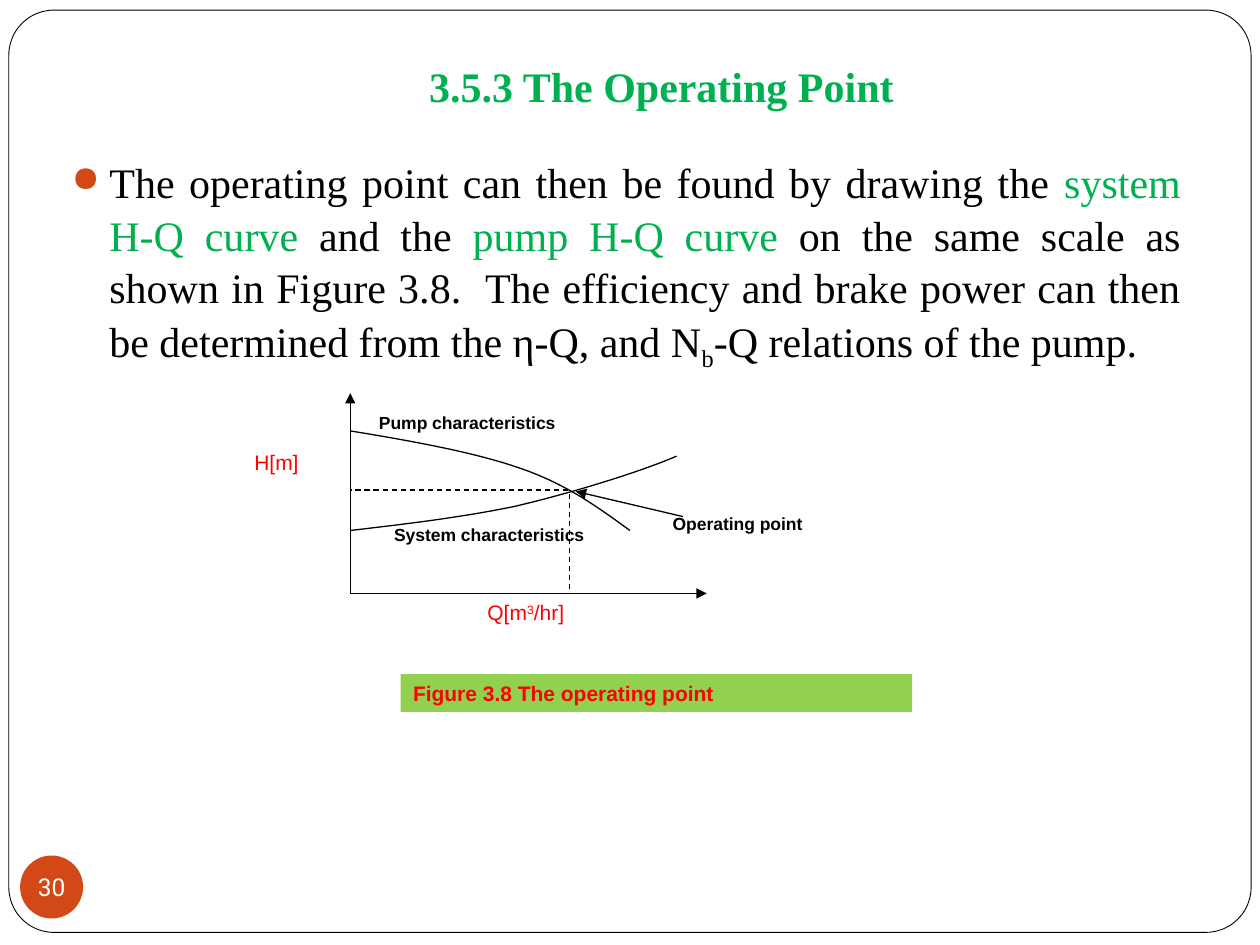
from lxml.etree import SubElement
from pptx import Presentation
from pptx.dml.color import RGBColor
from pptx.enum.dml import MSO_LINE
from pptx.enum.shapes import MSO_CONNECTOR, MSO_SHAPE
from pptx.enum.text import MSO_ANCHOR, PP_ALIGN
from pptx.oxml.ns import qn
from pptx.util import Inches, Pt

BLACK, WHITE, RED, GREEN, ORANGE = "000000", "FFFFFF", "FF0000", "00B050", "D34817"


def color(value):
    return RGBColor.from_string(value)


def write(shape, pieces, size, font="Arial", bold=False, align=PP_ALIGN.LEFT, anchor=MSO_ANCHOR.TOP):
    frame = shape.text_frame
    frame.word_wrap = True
    frame.vertical_anchor = anchor
    para = frame.paragraphs[0]
    para.alignment = align
    for text, ink, baseline in pieces:
        span = para.add_run()
        span.text = text
        span.font.size = Pt(size)
        span.font.name = font
        span.font.bold = bold
        span.font.color.rgb = color(ink)
        if baseline:
            span.font._element.set("baseline", str(baseline * 1000))
    return para


deck = Presentation()
deck.slide_width, deck.slide_height = Inches(10), Inches(7.5)
page = deck.slides.add_slide(deck.slide_layouts[6])
shapes = page.shapes

border = shapes.add_shape(MSO_SHAPE.ROUNDED_RECTANGLE, Inches(0.07), Inches(0.08), Inches(9.86), Inches(7.32))
border.adjustments[0] = 0.049
border.shadow.inherit = False
border.fill.solid()
border.fill.fore_color.rgb = color(WHITE)
border.line.color.rgb = color(BLACK)
border.line.width = Pt(0.5)

title = shapes.add_textbox(Inches(1), Inches(0.3), Inches(8.5), Inches(1.25))
title.text_frame.margin_top = Inches(0.18)
write(title, [("3.5.3 The Operating Point", GREEN, 0)], 24, "Times New Roman", True, PP_ALIGN.CENTER)

badge = shapes.add_shape(MSO_SHAPE.OVAL, Inches(0.16), Inches(6.79), Inches(0.5), Inches(0.5))
badge.shadow.inherit = False
badge.fill.solid()
badge.fill.fore_color.rgb = color(ORANGE)
badge.line.fill.background()
write(badge, [("30", WHITE, 0)], 14, "Roboto", False, PP_ALIGN.CENTER, MSO_ANCHOR.MIDDLE)
badge.text_frame.word_wrap = False
for side in ("left", "top", "right", "bottom"):
    setattr(badge.text_frame, f"margin_{side}", 0)

body = shapes.add_textbox(Inches(0.47), Inches(1.17), Inches(9), Inches(4.95))
para = write(body, [
    ("The operating point can then be found by drawing the ", BLACK, 0),
    ("system H-Q curve ", GREEN, 0),
    ("and the ", BLACK, 0),
    ("pump H-Q curve ", GREEN, 0),
    ("on the same scale as shown in Figure 3.8.  The efficiency and brake power can then "
     "be determined from the η-Q, and N", BLACK, 0),
    ("b", BLACK, -25),
    ("-Q relations of the pump. ", BLACK, 0),
], 24, "Times New Roman", align=PP_ALIGN.JUSTIFY)
para.space_before = Pt(5.8)
para.line_spacing = 1.05
settings = para._p.get_or_add_pPr()
settings.set("marL", str(Inches(0.3)))
settings.set("indent", str(Inches(-0.3)))
bullet_color = SubElement(settings, qn("a:buClr"))
SubElement(bullet_color, qn("a:srgbClr"), val=ORANGE)
SubElement(settings, qn("a:buSzPct"), val="85000")
SubElement(settings, qn("a:buChar"), char="●")

strokes = [
    (2.78, 4.71, 2.78, 3.12, "arrow"),
    (2.78, 4.71, 5.61, 4.71, "arrow"),
    (5.42, 4.1, 4.57, 3.9, "arrow"),
    (4.51, 3.89, 2.78, 3.89, "dash"),
    (4.52, 3.92, 4.52, 4.71, "dash"),
]
for x1, y1, x2, y2, style in strokes:
    stroke = shapes.add_connector(MSO_CONNECTOR.STRAIGHT, Inches(x1), Inches(y1), Inches(x2), Inches(y2))
    stroke.line.color.rgb = color(BLACK)
    stroke.line.width = Pt(0.75)
    if style == "dash":
        stroke.line.dash_style = MSO_LINE.DASH
    else:
        SubElement(stroke.line._get_or_add_ln(), qn("a:tailEnd"), type="triangle")
    SubElement(stroke._element.spPr, qn("a:effectLst"))

pump_curve = [(2.78, 3.42), (3.27, 3.5), (3.77, 3.59), (4.14, 3.72), (4.51, 3.85), (4.75, 4.03), (5, 4.21)]
system_curve = [(2.78, 4.21), (3.21, 4.16), (3.64, 4.11), (4.08, 4.02), (4.51, 3.92), (5.07, 3.75), (5.37, 3.62)]
STEPS = 16
for controls in (pump_curve, system_curve):
    points = []
    for first in (0, 3):
        for step in range(1, STEPS + 1):
            t = step / STEPS
            weights = ((1 - t) ** 3, 3 * t * (1 - t) ** 2, 3 * t ** 2 * (1 - t), t ** 3)
            points.append([
                Inches(sum(weight * point[axis] for weight, point in zip(weights, controls[first:first + 4])))
                for axis in (0, 1)
            ])
    builder = shapes.build_freeform(Inches(controls[0][0]), Inches(controls[0][1]))
    builder.add_line_segments(points, close=False)
    curve = builder.convert_to_shape()
    curve.shadow.inherit = False
    curve.fill.background()
    curve.line.color.rgb = color(BLACK)
    curve.line.width = Pt(0.75)

labels = [
    (3.77, 4.71, 1.35, 0.4, 12, False, [("Q[m", RED, 0), ("3", RED, 30), ("/hr]", RED, 0)]),
    (1.92, 3.52, 1.35, 0.4, 12, False, [("H[m]", RED, 0)]),
    (3.03, 4.11, 2.46, 0.3, 10, True, [("System characteristics", BLACK, 0)]),
    (2.91, 3.22, 2.46, 0.3, 10, True, [("Pump characteristics", BLACK, 0)]),
    (5.24, 4.02, 2.09, 0.3, 10, True, [("Operating point", BLACK, 0)]),
]
for left, top, width, height, size, bold, pieces in labels:
    label = shapes.add_textbox(Inches(left), Inches(top), Inches(width), Inches(height))
    write(label, pieces, size, bold=bold)

caption = shapes.add_shape(MSO_SHAPE.RECTANGLE, Inches(3.18), Inches(5.35), Inches(4.06), Inches(0.3))
caption.shadow.inherit = False
caption.fill.solid()
caption.fill.fore_color.rgb = color("92D050")
caption.line.fill.background()
write(caption, [("Figure 3.8 The operating point", RED, 0)], 12, bold=True)

deck.save("out.pptx")
